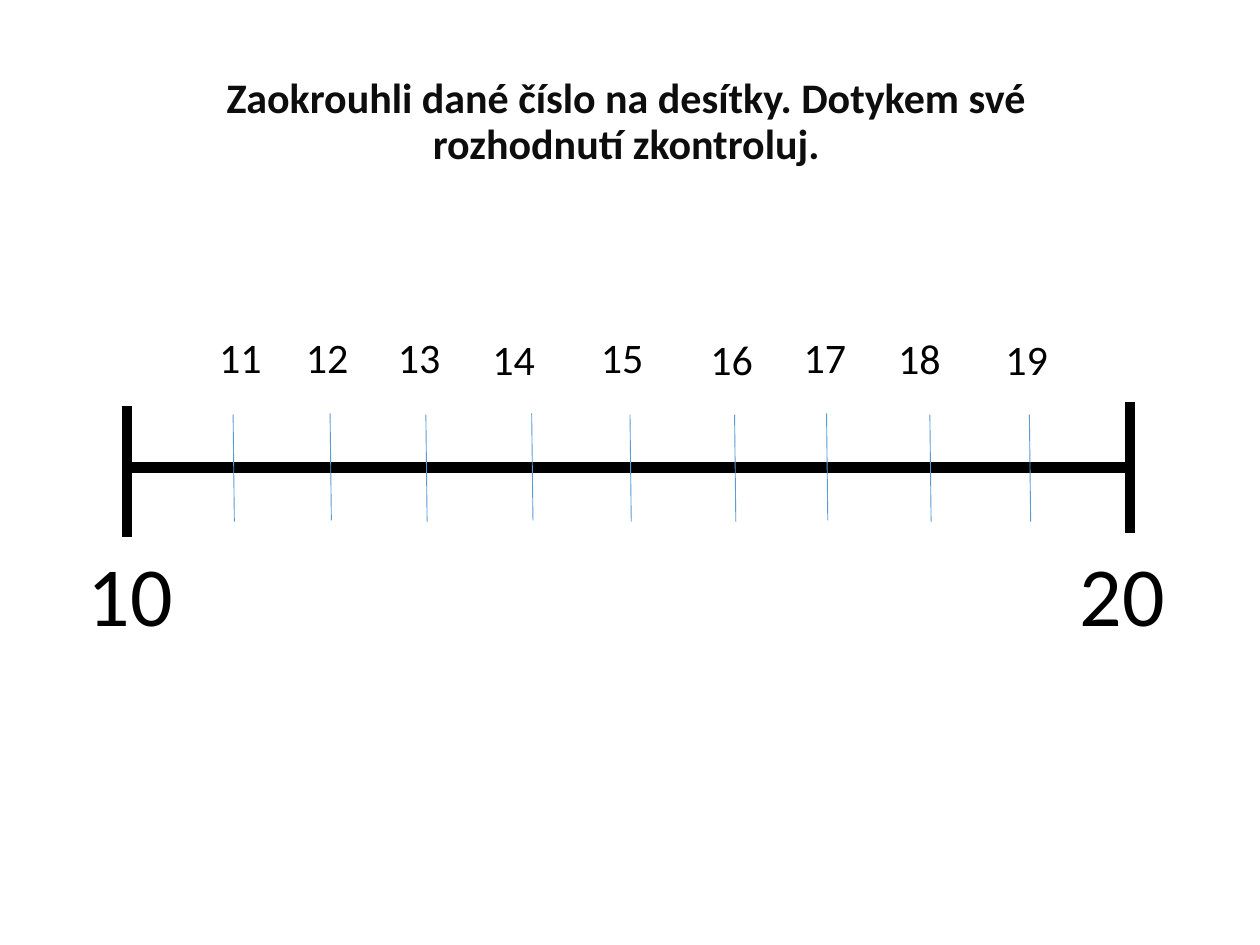
from lxml import etree
from pptx import Presentation
from pptx import util as u
from pptx.dml import color
from pptx.enum import shapes, text
from pptx.oxml import ns

COLORS = {"title": "0D0D0D", "axis": "000000", "tick": "5B9BD5", "label": "000000"}
FONT = "Calibri"

TICKS = [
    (11, 0.84, 0.71, 0.63, 0, 0.63),
    (12, 1.61, 0.7, 1.32, 0, 0.81),
    (13, 2.37, 0.71, 2.05, 0, 0.7),
    (14, 3.21, 0.7, 2.8, 0.02, 0.65),
    (15, 3.99, 0.71, 3.66, 0, 0.61),
    (16, 4.82, 0.71, 4.53, 0.02, 0.59),
    (17, 5.55, 0.7, 5.27, 0, 0.61),
    (18, 6.37, 0.71, 6.02, 0.01, 0.55),
    (19, 7.16, 0.71, 6.87, 0.02, 0.61),
]


def add_text(slide, content, left, top, width, height, size=24, color_name="label",
             bold=False, align=text.PP_ALIGN.LEFT, anchor=text.MSO_ANCHOR.TOP,
             line_spacing=None, auto_size=text.MSO_AUTO_SIZE.SHAPE_TO_FIT_TEXT):
    shape = slide.shapes.add_textbox(*map(u.Inches, (left, top, width, height)))
    frame = shape.text_frame
    frame.word_wrap = True
    frame.auto_size = auto_size
    frame.vertical_anchor = anchor
    paragraph = frame.paragraphs[0]
    paragraph.alignment = align
    paragraph.line_spacing = line_spacing
    run = paragraph.add_run()
    run.text = content
    run.font.name = FONT
    run.font.size = u.Pt(size)
    run.font.bold = bold
    run.font.color.rgb = color.RGBColor.from_string(COLORS[color_name])


def add_line(group, start_x, start_y, end_x, end_y, color_name, width):
    connector = group.shapes.add_connector(
        shapes.MSO_CONNECTOR.STRAIGHT, *map(u.Inches, (start_x, start_y, end_x, end_y)))
    connector.line.color.rgb = color.RGBColor.from_string(COLORS[color_name])
    connector.line.width = u.Pt(width)
    etree.SubElement(connector.element.spPr, ns.qn("a:effectLst"))


def add_title(slide, left, top, width, height):
    add_text(slide, "Zaokrouhli dané číslo na desítky. Dotykem své rozhodnutí zkontroluj.",
             left, top, width, height, color_name="title", bold=True,
             align=text.PP_ALIGN.CENTER, anchor=text.MSO_ANCHOR.MIDDLE,
             line_spacing=0.9, auto_size=text.MSO_AUTO_SIZE.NONE)


def add_number_line(slide, left, top, width):
    right = left + width
    axis_y = top + 1.13
    group = slide.shapes.add_group_shape()
    add_line(group, left, axis_y, right, axis_y, "axis", 6)
    for x, y in ((left, top + 0.64), (right + 0.04, top + 0.61)):
        add_line(group, x, y, x, y + 1.04, "axis", 6)
    for number, tick_x, tick_y, label_x, label_y, label_width in TICKS:
        x, y = left + tick_x, top + tick_y
        add_line(group, x, y, x + 0.01, y + 0.85, "tick", 0.5)
        add_text(slide, str(number), left + label_x, top + label_y, label_width, 0.5)
    add_text(slide, "10", left - 0.41, top + 1.68, 0.94, 0.91, size=48)
    add_text(slide, "20", right - 0.46, top + 1.68, 1.04, 0.91, size=48)


def main():
    presentation = Presentation()
    presentation.slide_width = u.Inches(10)
    presentation.slide_height = u.Inches(7.5)
    slide = presentation.slides.add_slide(presentation.slide_layouts[6])
    add_title(slide, 1.01, 0.35, 7.92, 1.25)
    add_number_line(slide, 1.01, 2.58, 7.92)
    presentation.save("out.pptx")


if __name__ == "__main__":
    main()
